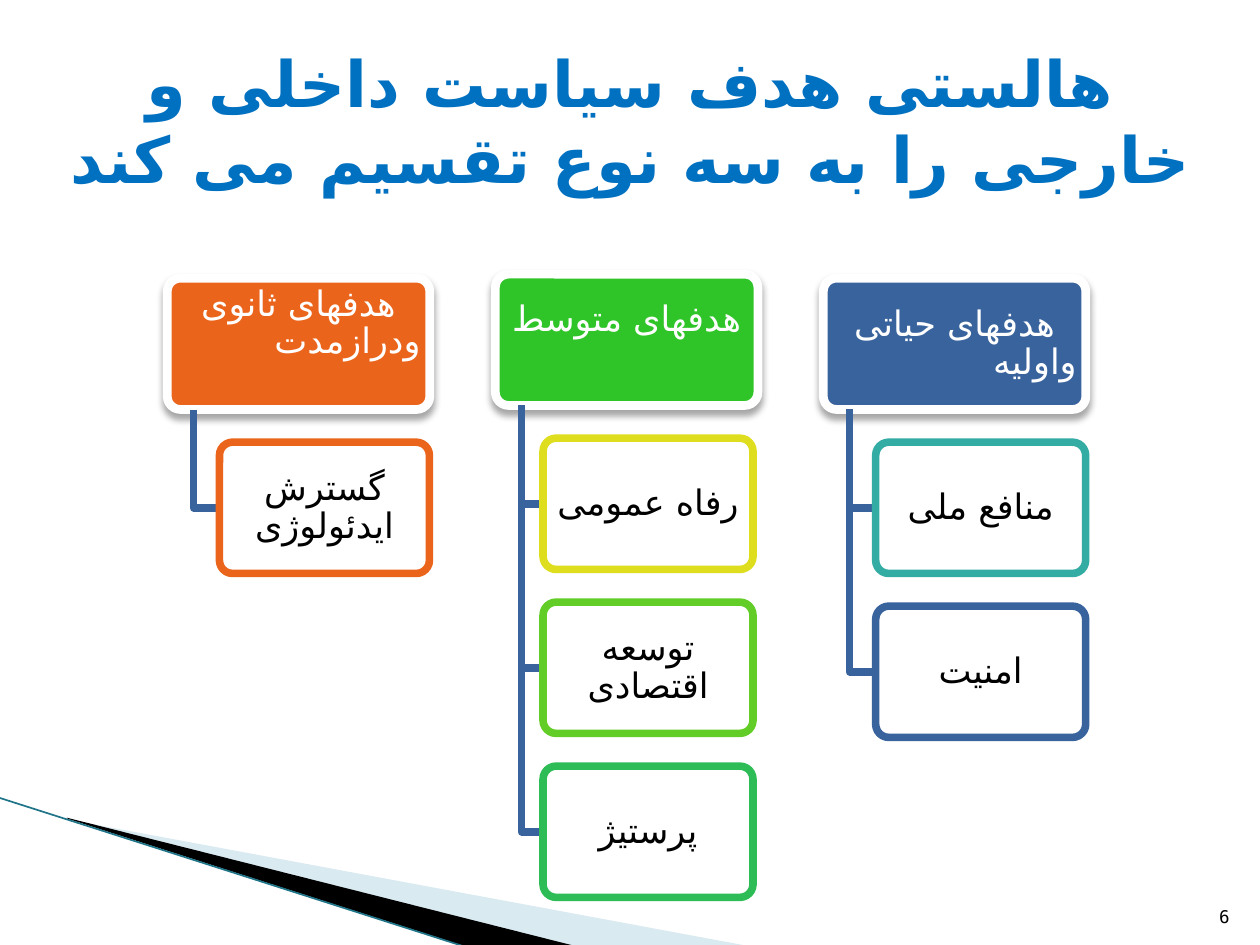
from lxml import etree
from pptx import Presentation
from pptx import util as u
from pptx.dml import color
from pptx.enum import shapes, text
from pptx.oxml import ns

Pt = u.Pt
rgb = color.RGBColor.from_string
CENTER, RIGHT = text.PP_ALIGN.CENTER, text.PP_ALIGN.RIGHT

prs = Presentation()
prs.slide_width, prs.slide_height = Pt(720), Pt(540)
s = prs.slides.add_slide(prs.slide_layouts[6])


def add_path(points, closed):
    fb = s.shapes.build_freeform(Pt(points[0][0]), Pt(points[0][1]))
    fb.add_line_segments([(Pt(x), Pt(y)) for x, y in points[1:]], close=closed)
    sp = fb.convert_to_shape()
    sp.shadow.inherit = False
    return sp


def write(sp, lines, size, hue, anchor, bold=False, rtl=True, spacing=None):
    tf = sp.text_frame
    tf.word_wrap = True
    tf.vertical_anchor = anchor
    tf.text = "\n".join(line for line, _ in lines)
    for p, (_, align) in zip(tf.paragraphs, lines):
        p.alignment = align
        p.line_spacing = spacing
        if rtl:
            p._p.get_or_add_pPr().set("rtl", "1")
        for r in p.runs:
            r.font.size = Pt(size)
            r.font.bold = bold
            r.font.name = "DejaVu Sans Mono"
            r.font.color.rgb = rgb(hue)
            cs = etree.SubElement(r._r.get_or_add_rPr(), ns.qn("a:cs"))
            cs.set("typeface", "DejaVu Sans")


wedges = [
    ("A0CBDC", [(39.6, 468.5), (428.4, 540.7), (328.3, 540.7), (39.6, 468)]),
    ("000000", [(38.2, 467.3), (329, 540.7), (267.8, 541.4), (38.9, 468)]),
]
for hue, points in wedges:
    sp = add_path(points, True)
    sp.fill.solid()
    sp.fill.fore_color.rgb = rgb(hue)
    sp.line.fill.background()
    if hue == "A0CBDC":
        clr = sp._element.spPr.find(".//" + ns.qn("a:srgbClr"))
        etree.SubElement(clr, ns.qn("a:alpha")).set("val", "40000")

edge = s.shapes.add_connector(shapes.MSO_CONNECTOR.STRAIGHT, Pt(-0.7), Pt(455.8), Pt(267), Pt(541.4))
edge.line.color.rgb = rgb("1F7488")
edge.line.width = Pt(0.95)
etree.SubElement(edge._element.spPr, ns.qn("a:effectLst"))

HEAD_W, BOX_W, BOX_H, STEP = 150, 120, 75, 93.7
columns = [
    (95.6, 159, 125.4, "EB641B", 25, [("هدفهای ثانوی", CENTER), ("ودرازمدت", RIGHT)],
     [("گسترش ایدئولوژی", "EB641B")]),
    (283.1, 156.7, 310.3, "2FC529", 25, [("هدفهای متوسط", CENTER)],
     [("رفاه عمومی", "DFDE1E"), ("توسعه اقتصادی", "62CD26"), ("پرستیژ", "2DBC56")]),
    (470.5, 159, 500.4, "39639D", 2, [("هدفهای حیاتی", CENTER), ("واولیه", RIGHT)],
     [("منافع ملی", "33ACA4"), ("امنیت", "39639D")]),
]
for x, y, box_x, hue, bottom, heading, goals in columns:
    boxes = [(x, y, HEAD_W, hue, "FFFFFF", 5, heading, "FFFFFF", bottom)]
    for i, (goal, border) in enumerate(goals, 1):
        boxes.append((box_x, y + i * STEP, BOX_W, "FFFFFF", border, 4.33,
                      [(goal, CENTER)], "000000", 2))
    for i, (left, top, width, fill, border, weight, lines, ink, pad) in enumerate(boxes):
        if i:
            mid = top + BOX_H / 2
            link = add_path([(x + 15, y + BOX_H), (x + 15, mid), (box_x, mid)], False)
            link.fill.background()
            link.line.color.rgb = rgb("39639D")
            link.line.width = Pt(4.33)
        sp = s.shapes.add_shape(shapes.MSO_SHAPE.ROUNDED_RECTANGLE,
                                Pt(left), Pt(top), Pt(width), Pt(BOX_H))
        sp.adjustments[0] = 0.1
        sp.fill.solid()
        sp.fill.fore_color.rgb = rgb(fill)
        sp.line.color.rgb = rgb(border)
        sp.line.width = Pt(weight)
        sp.shadow.inherit = False
        if i == 0:
            effects = sp._element.spPr.find(ns.qn("a:effectLst"))
            shade = etree.SubElement(effects, ns.qn("a:outerShdw"), blurRad=str(Pt(4)),
                                     dist=str(Pt(3)), dir="5400000", rotWithShape="0")
            clr = etree.SubElement(shade, ns.qn("a:srgbClr"), val="000000")
            etree.SubElement(clr, ns.qn("a:alpha"), val="35000")
        tf = sp.text_frame
        tf.margin_left = tf.margin_right = Pt(3)
        tf.margin_top, tf.margin_bottom = Pt(2), Pt(pad)
        write(sp, lines, 20, ink, text.MSO_ANCHOR.MIDDLE, spacing=0.9)

title = s.shapes.add_textbox(Pt(36), Pt(23.5), Pt(648), Pt(90))
title.text_frame.margin_left = title.text_frame.margin_right = 0
write(title, [("هالستی هدف سیاست داخلی و خارجی را به سه نوع تقسیم می کند", CENTER)],
      36.5, "0070C0", text.MSO_ANCHOR.MIDDLE, bold=True)

number = s.shapes.add_textbox(Pt(681), Pt(504.7), Pt(28.8), Pt(28.8))
write(number, [("6", RIGHT)], 10, "000000", text.MSO_ANCHOR.BOTTOM, rtl=False)

prs.save("out.pptx")
